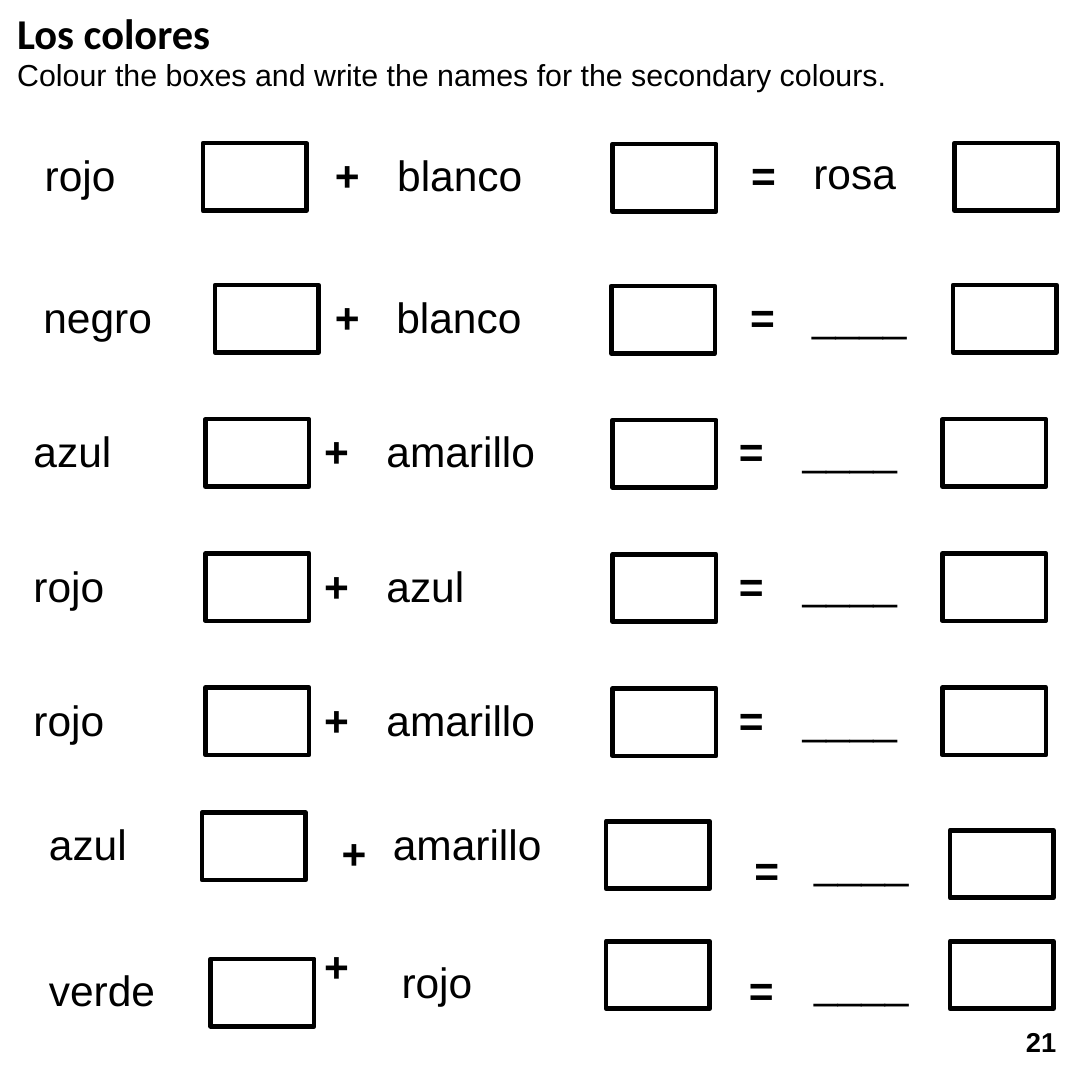
import pptx
import pptx.util
import pptx.dml.color
import pptx.enum.shapes
import pptx.enum.text

Cm, Pt = pptx.util.Cm, pptx.util.Pt
SHAPES = pptx.enum.shapes.MSO_SHAPE
TEXT = pptx.enum.text

COLORS = {"ink": "000000", "paper": "FFFFFF"}

# Content
TITLE = "Los colores"
TASK = "Colour the boxes and write the names for the secondary colours."
PAGE = "21"
BLANK = "____"
MIXES = [
    ("rojo", "blanco", "rosa"),
    ("negro", "blanco", BLANK),
    ("azul", "amarillo", BLANK),
    ("rojo", "azul", BLANK),
    ("rojo", "amarillo", BLANK),
    ("azul", "amarillo", BLANK),
    ("verde", "rojo", BLANK),
]

# Layout in cm; each row holds: word, box, plus, word, box, equals, result, box
BOX_W, BOX_H, TEXT_H = 2.41, 1.57, 1.45
WIDTHS = {"rojo": 2.18, "azul": 2.34, "rosa": 2.46, "negro": 3.07, "verde": 3.02,
          "blanco": 3.45, "amarillo": 4.01, BLANK: 2.74, "+": 1.09, "=": 1.09}
PITCH = 3.12
MIDDLE_LEFTS = (0.53, 4.78, 7.29, 8.74, 14.25, 16.94, 18.42, 21.92)
LEFTS = [
    (0.79, 4.72, 7.54, 8.99, 14.25, 17.22, 18.67, 22.2),
    (0.76, 5, 7.54, 8.97, 14.22, 17.2, 18.64, 22.17),
    *[MIDDLE_LEFTS] * 3,
    (0.89, 4.7, 7.7, 8.89, 14.1, 17.3, 18.69, 22.1),
    (0.89, 4.9, 7.29, 9.09, 14.1, 17.17, 18.69, 22.1),
]
TOPS = [3.35, *[6.65 + PITCH * i for i in range(4)], 18.9, 21.74]
EVEN_DROPS = (0, -0.02, 0, 0, 0, 0, -0.05, -0.02)
DROPS = [
    *[EVEN_DROPS] * 5,
    (0, 0, 0.2, 0, 0.2, 0.61, 0.41, 0.41),
    (0.56, 0.56, 0, 0.36, 0.15, 0.56, 0.36, 0.15),
]

prs = pptx.Presentation()
prs.slide_width, prs.slide_height = Cm(25.4), Cm(25)
s = prs.slides.add_slide(prs.slide_layouts[6])


def rgb(name):
    return pptx.dml.color.RGBColor.from_string(COLORS[name])


def write(tf, text, size, bold=False, font="Arial"):
    p = tf.paragraphs[0]
    r = p.add_run()
    r.text = text
    r.font.size, r.font.bold, r.font.name = Pt(size), bold, font
    r.font.color.rgb = rgb("ink")
    return p


def add_text(text, x, y, w, h, size, bold=False, font="Arial", wrap=False):
    tf = s.shapes.add_textbox(Cm(x), Cm(y), Cm(w), Cm(h)).text_frame
    tf.word_wrap = wrap
    write(tf, text, size, bold, font)


def add_box(x, y, filled):
    sp = s.shapes.add_shape(SHAPES.RECTANGLE, Cm(x), Cm(y), Cm(BOX_W), Cm(BOX_H))
    sp.shadow.inherit = False
    if filled:
        sp.fill.solid()
        sp.fill.fore_color.rgb = rgb("paper")
    else:
        sp.fill.background()
    sp.line.color.rgb = rgb("ink")
    sp.line.width = Pt(3)


# Heading
add_text(TITLE, 0.15, 0.05, 25.1, TEXT_H, 28, True, "Calibri", wrap=True)
add_text(TASK, 0.15, 1.17, 25.1, 1.12, 20, wrap=True)

# Colour sums; None stands for a box to colour
for (first, second, result), lefts, top, drops in zip(MIXES, LEFTS, TOPS, DROPS):
    parts = (first, None, "+", second, None, "=", result, None)
    for i, (part, x, drop) in enumerate(zip(parts, lefts, drops)):
        if part is None:
            add_box(x, top + drop, filled=i == 4)
        else:
            add_text(part, x, top + drop, WIDTHS[part], TEXT_H, 28, part in "+=")

# Page number
sp = s.shapes.add_shape(SHAPES.ROUNDED_RECTANGLE, Cm(23.29), Cm(23.65), Cm(1.85), Cm(1.17))
sp.shadow.inherit = False
sp.fill.background()
sp.line.fill.background()
sp.text_frame.vertical_anchor = TEXT.MSO_ANCHOR.MIDDLE
write(sp.text_frame, PAGE, 18, True).alignment = TEXT.PP_ALIGN.CENTER

prs.save("out.pptx")
